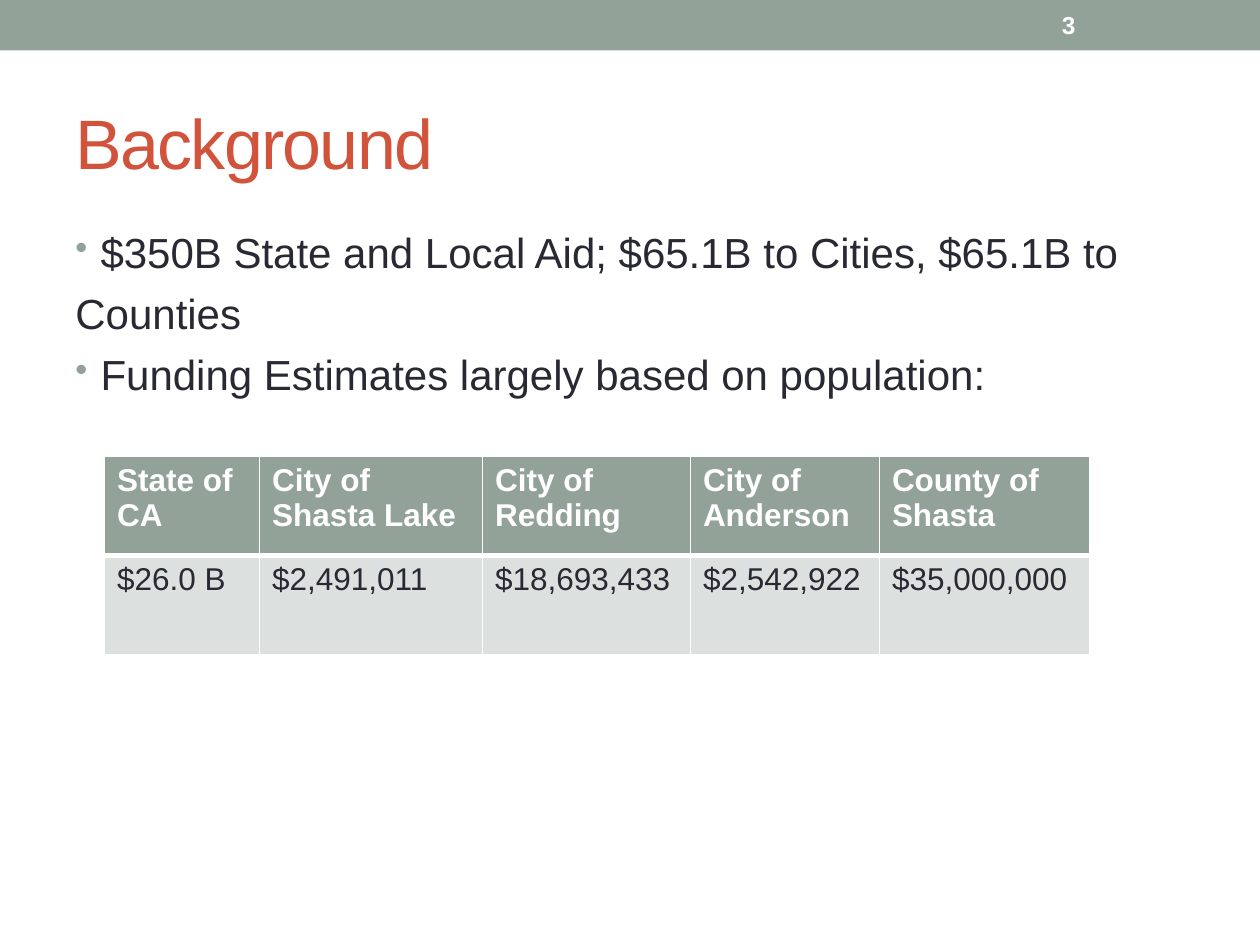
from lxml.etree import SubElement as Sub
from pptx import Presentation
from pptx.dml.color import RGBColor as Rgb
from pptx.enum.shapes import MSO_SHAPE as Shape
from pptx.enum.text import MSO_ANCHOR as Anchor, PP_ALIGN as Align
from pptx.oxml.ns import qn
from pptx.util import Inches, Pt

SAGE, RED, INK, PALE, WHITE = "93A299", "D2533C", "292934", "DCE0DE", "FFFFFF"
POINTS = [
    ("$350B State and Local Aid; $65.1B to", True),
    ("Counties", False),
    ("Funding Estimates largely based on population:", True),
]
POINTS[0] = ("$350B State and Local Aid; $65.1B to Cities, $65.1B to", True)
FUNDS = [
    ("State of CA", "$26.0 B", 1.23),
    ("City of Shasta Lake", "$2,491,011", 1.77),
    ("City of Redding", "$18,693,433", 1.65),
    ("City of Anderson", "$2,542,922", 1.5),
    ("County of Shasta", "$35,000,000", 1.67),
]


def paint(fill, color):
    fill.solid()
    fill.fore_color.rgb = Rgb.from_string(color)


def style(para, size, color, bold=False):
    font = para.font
    font.name, font.size, font.bold = "Arial", Pt(size), bold
    font.color.rgb = Rgb.from_string(color)
    para.alignment = Align.LEFT


def add_text(slide, x, y, w, h):
    frame = slide.shapes.add_textbox(*map(Inches, (x, y, w, h))).text_frame
    frame.word_wrap = True
    return frame


def add_bar(slide, x, y, w, h):
    """Top band with the slide number near its right end."""
    bar = slide.shapes.add_shape(Shape.RECTANGLE, *map(Inches, (x, y, w, h)))
    bar.shadow.inherit = False
    paint(bar.fill, SAGE)
    bar.line.fill.background()
    frame = add_text(slide, x + w - 1.67, y + 0.02, 1.17, h - 0.04)
    frame.vertical_anchor = Anchor.MIDDLE
    frame.text = "3"
    style(frame.paragraphs[0], 14, WHITE, True)


def set_title(slide, x, y, w, h):
    title = slide.shapes.title
    title.left, title.top, title.width, title.height = map(Inches, (x, y, w, h))
    frame = title.text_frame
    frame.text = "Background"
    frame.vertical_anchor = Anchor.MIDDLE
    para = frame.paragraphs[0]
    style(para, 40, RED)
    para.font._rPr.set("spc", "-100")


def add_bullet(para):
    props = para._p.get_or_add_pPr()
    props.set("marL", str(Inches(0.2)))
    props.set("indent", str(Inches(-0.2)))
    marks = [Sub(props, qn("a:buClr")), Sub(props, qn("a:buSzPct")),
             Sub(props, qn("a:buChar"))]
    Sub(marks[0], qn("a:srgbClr"), val=SAGE)
    marks[1].set("val", "85000")
    marks[2].set("char", "•")


def add_points(slide, x, y, w, h):
    frame = add_text(slide, x, y, w, h)
    for i, (text, bullet) in enumerate(POINTS):
        para = frame.add_paragraph() if i else frame.paragraphs[0]
        para.text = text
        para.space_before = Pt(6)
        if bullet:
            add_bullet(para)
        style(para, 24, INK)


def add_border(cell, side, width):
    line = Sub(cell._tc.get_or_add_tcPr(), qn("a:ln" + side), w=str(Pt(width)))
    Sub(Sub(line, qn("a:solidFill")), qn("a:srgbClr"), val=WHITE)


def fill_cell(cell, text, head):
    for side in "LRTB":
        thick = side == ("B" if head else "T")
        add_border(cell, side, 3 if thick else 1)
    paint(cell.fill, SAGE if head else PALE)
    cell.text = text
    style(cell.text_frame.paragraphs[0], 18, WHITE if head else INK, head)


def add_funds(slide, x, y, w, h):
    table = slide.shapes.add_table(
        2, len(FUNDS), *map(Inches, (x, y, w, h))).table
    for row in table.rows:
        row.height = Inches(h / 2)
    for col, (place, sum_, width) in enumerate(FUNDS):
        table.columns[col].width = Inches(width)
        fill_cell(table.cell(0, col), place, True)
        fill_cell(table.cell(1, col), sum_, False)


def main():
    deck = Presentation()
    deck.slide_width, deck.slide_height = Inches(10), Inches(7.5)
    slide = deck.slides.add_slide(deck.slide_layouts[5])
    add_bar(slide, 0, 0, 10, 0.4)
    set_title(slide, 0.5, 0.58, 9, 1.08)
    add_points(slide, 0.5, 1.75, 9, 5.33)
    add_funds(slide, 0.83, 3.62, 7.82, 1.58)
    deck.save("out.pptx")


if __name__ == "__main__":
    main()
